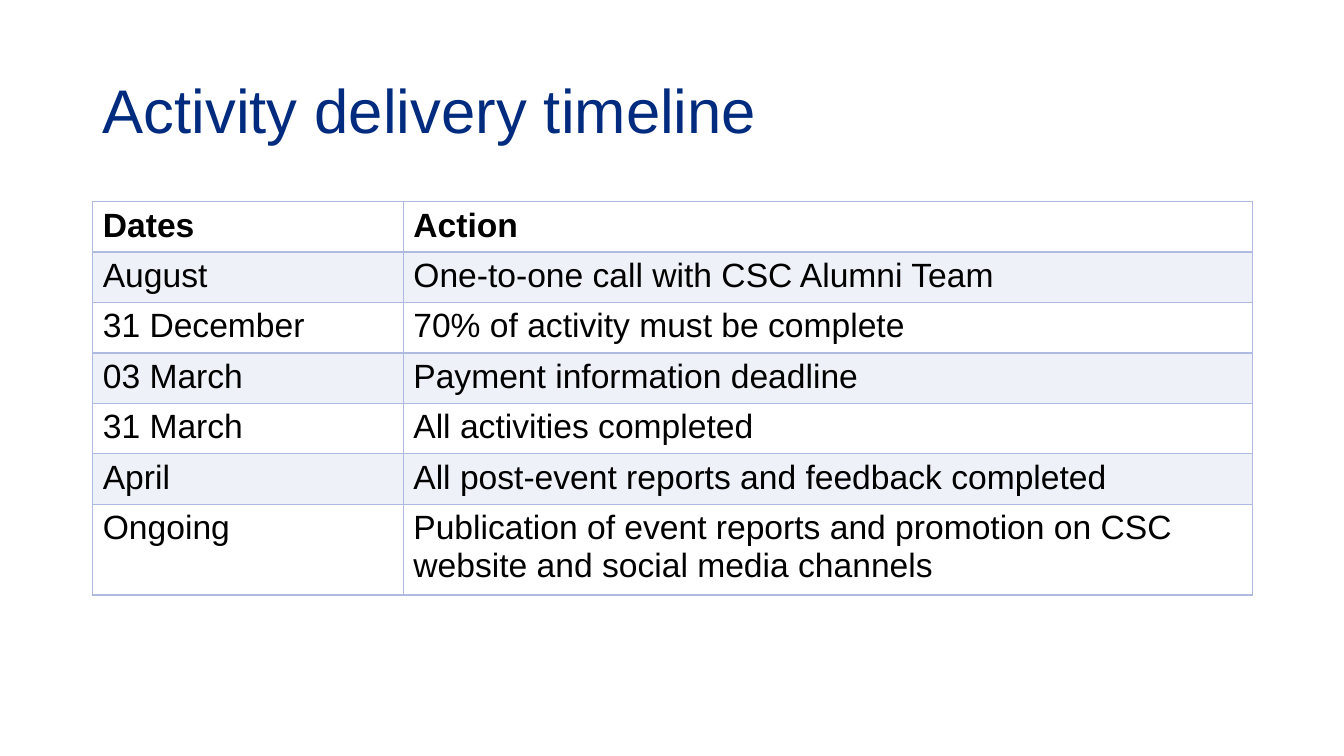
from lxml import etree
from pptx import Presentation
from pptx.dml.color import RGBColor
from pptx.enum import text as t
from pptx.oxml.ns import qn
from pptx.util import Inches, Pt

HUES = {"title": "002B7F", "text": "000000", "band": "AEBADF", "rule": "AEBADF"}
FACES = {
    "title": {"name": "Arial", "size": Pt(44), "bold": False},
    "head": {"name": "Arial", "size": Pt(24), "bold": True},
    "body": {"name": "Arial", "size": Pt(24), "bold": False},
}
ROWS = [
    ("Dates", "Action"),
    ("August", "One-to-one call with CSC Alumni Team"),
    ("31 December", "70% of activity must be complete"),
    ("03 March", "Payment information deadline"),
    ("31 March", "All activities completed"),
    ("April", "All post-event reports and feedback completed"),
    ("Ongoing", "Publication of event reports and promotion on CSC "
                "website and social media channels"),
]
WIDTHS = [3.08, 8.42]
LEFT, WIDE, HIGH = 0.92, sum(WIDTHS), 0.41


def style(para, face, hue):
    for key, val in FACES[face].items():
        setattr(para.font, key, val)
    para.font.color.rgb = RGBColor.from_string(HUES[hue])


def border(cell, sides):
    props = cell._tc.get_or_add_tcPr()
    for spot, (side, width) in enumerate(sides.items()):
        line = etree.Element(qn(f"a:ln{side}"), w=str(Pt(width)))
        fill = etree.SubElement(line, qn("a:solidFill"))
        etree.SubElement(fill, qn("a:srgbClr"), val=HUES["rule"])
        props.insert(spot, line)


deck = Presentation()
deck.slide_width, deck.slide_height = Inches(13.33), Inches(7.5)
slide = deck.slides.add_slide(deck.slide_layouts[6])

# Title
box = slide.shapes.add_textbox(Inches(LEFT), Inches(0.4), Inches(WIDE), Inches(1.45))
frame = box.text_frame
frame.word_wrap = True
frame.vertical_anchor = t.MSO_ANCHOR.MIDDLE
frame.text = "Activity delivery timeline"
frame.paragraphs[0].line_spacing = 0.9
style(frame.paragraphs[0], "title", "title")

# Timeline table, without a built-in style
grid = slide.shapes.add_table(len(ROWS), len(WIDTHS), Inches(LEFT), Inches(2),
                              Inches(WIDE), Inches(HIGH * len(ROWS))).table
grid.first_row = grid.horz_banding = False
grid._tbl.tblPr.find(qn("a:tableStyleId")).text = "{2D5ABB26-0587-4C30-8999-92F81FD0307C}"
for col, width in zip(grid.columns, WIDTHS):
    col.width = Inches(width)

# Cells: bold header, then every second row tinted
for r, row in enumerate(ROWS):
    for c, words in enumerate(row):
        cell = grid.cell(r, c)
        cell.text = words
        style(cell.text_frame.paragraphs[0], "body" if r else "head", "text")
        if r % 2:
            cell.fill.solid()
            cell.fill.fore_color.rgb = RGBColor.from_string(HUES["band"])
            tint = cell._tc.tcPr.find(".//" + qn("a:srgbClr"))
            etree.SubElement(tint, qn("a:alpha"), val="20000")
        else:
            cell.fill.background()
        border(cell, {"L": 1, "R": 1, "T": 2 if r == 1 else 1, "B": 1 if r else 2})

deck.save("out.pptx")
